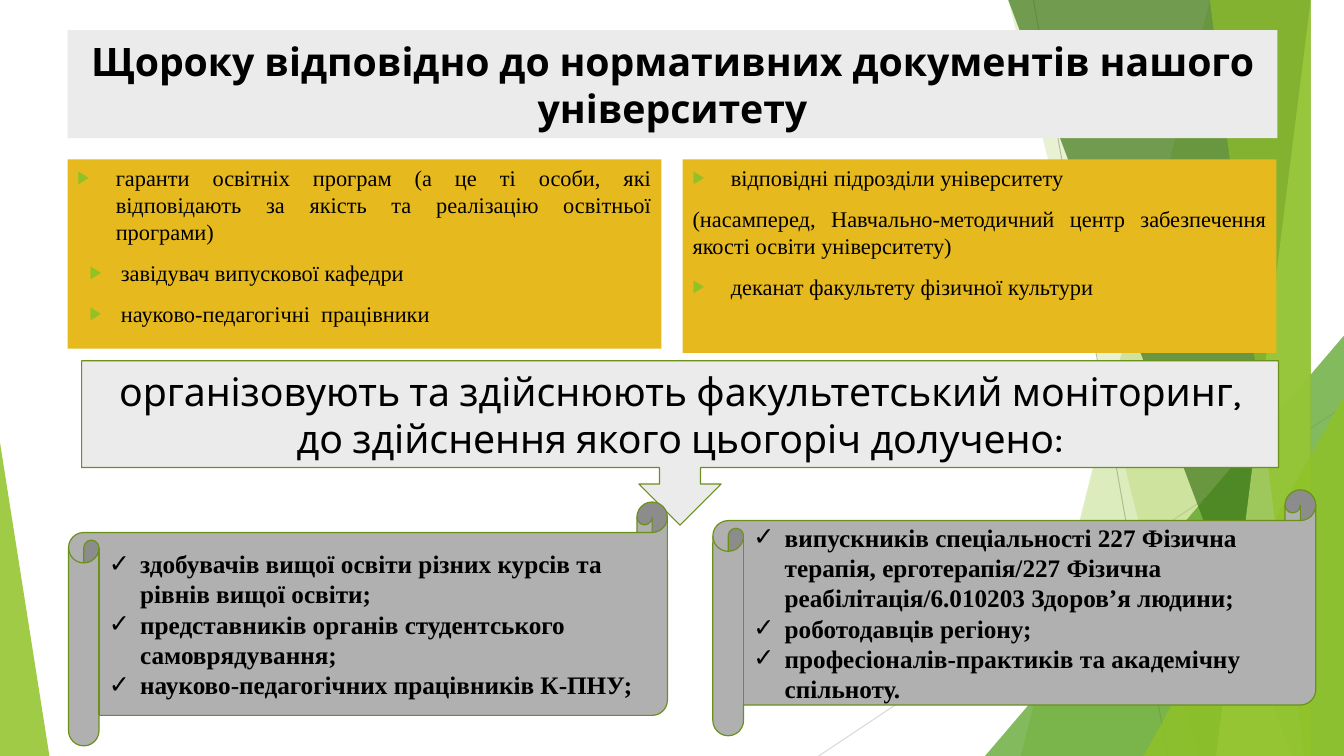
from lxml import etree
from pptx import Presentation
from pptx import util as u
from pptx.dml.color import RGBColor
from pptx.enum import shapes, text
from pptx.oxml.ns import qn

WIDE, HIGH = 13.33, 7.5
BLACK = RGBColor(0, 0, 0)
PALE = RGBColor(0xEB, 0xEB, 0xEB)
GOLD = RGBColor(0xE6, 0xB9, 0x1E)
GREY = RGBColor(0xB0, 0xB0, 0xB0)
EDGE = RGBColor(0x6B, 0x90, 0x1C)
LIME = RGBColor(0x90, 0xC2, 0x26)
LEAF = RGBColor(0x54, 0xA0, 0x21)
PINE = RGBColor(0x3F, 0x78, 0x19)
MINT = RGBColor(0xC0, 0xE4, 0x74)
SILVER = RGBColor(0xBF, 0xBF, 0xBF)
MIST = RGBColor(0xD9, 0xD9, 0xD9)
SANS, SERIF = "Karla", "Times New Roman"
LEFT, CENTER, JUST = (text.PP_ALIGN.LEFT, text.PP_ALIGN.CENTER, text.PP_ALIGN.JUSTIFY)
KIND = shapes.MSO_SHAPE

HEAD = "Щороку відповідно до нормативних документів нашого університету"
CALL = "організовують та здійснюють факультетський моніторинг, до здійснення якого цьогоріч долучено:"

WIDER, NARROW, FLAT = (0.38, -0.38), (0.43, -0.31), None
CARDS = [
    ((0.67, 1.58, 5.89, 1.88), [
        ("гаранти освітніх програм (а це ті особи, які відповідають за якість та реалізацію освітньої програми)", JUST, WIDER),
        ("завідувач випускової кафедри", LEFT, NARROW),
        ("науково-педагогічні  працівники", LEFT, NARROW)]),
    ((6.77, 1.58, 5.89, 1.92), [
        ("відповідні підрозділи університету", LEFT, WIDER),
        ("(насамперед, Навчально-методичний центр забезпечення якості освіти університету)", JUST, FLAT),
        ("деканат факультету фізичної культури", LEFT, WIDER)]),
]
SCROLLS = [
    ((0.68, 4.98, 5.94, 2.42), [
        "здобувачів вищої освіти різних курсів та рівнів вищої освіти;",
        "представників органів студентського самоврядування;",
        "науково-педагогічних працівників К-ПНУ;"]),
    ((7.07, 4.86, 5.98, 2.44), [
        "випускників спеціальності 227 Фізична терапія, ерготерапія/227 Фізична реабілітація/6.010203 Здоров’я людини;",
        "роботодавців регіону;",
        "професіоналів-практиків та академічну спільноту."]),
]
RAYS = [((10.25, 0), (11.58, HIGH), SILVER), ((WIDE, 4.03), (8.12, HIGH), MIST)]
BANDS = [
    ("band", 12.28, 10.04, LIME, 30),
    ("band", 10.5, 11.83, LIME, 20),
    ("peak", (9.77, 3.33, 3.56, 4.17), 1, LEAF, 72),
    ("band", 10.21, 12.91, PINE, 70),
    ("band", 13.03, 11.92, MINT, 70),
    ("band", 11.96, 13.18, LIME, 65),
    ("peak", (11.34, 3.93, 1.99, 3.57), 1, LIME, 80),
    ("peak", (0, 4.39, 0.49, 3.11), 0, LIME, 85),
]

deck = Presentation()
deck.slide_width, deck.slide_height = u.Inches(WIDE), u.Inches(HIGH)
slide = deck.slides.add_slide(deck.slide_layouts[5])
art = slide.shapes


def paint(shape, fill, line=None):
    shape.shadow.inherit = False
    shape.fill.solid()
    shape.fill.fore_color.rgb = fill
    if line is None:
        shape.line.fill.background()
    else:
        shape.line.color.rgb = line
        shape.line.width = u.Pt(0.85)


def add(kind, box, fill, line=None):
    shape = art.add_shape(kind, *map(u.Inches, box))
    paint(shape, fill, line)
    return shape


def fade(shape, share):
    color = shape.fill._xPr.find(".//" + qn("a:srgbClr"))
    etree.SubElement(color, qn("a:alpha")).set("val", str(share * 1000))


def style(par, font, size, bold, align):
    par.alignment = align
    par.font.name, par.font.size, par.font.bold = font, u.Pt(size), bold
    par.font.color.rgb = BLACK


def mark(par, sign, inset, color=None, size=None):
    props = par._p.get_or_add_pPr()
    props.set("marL", str(u.Inches(inset[0])))
    props.set("indent", str(u.Inches(inset[1])))
    if color is not None:
        tint = etree.SubElement(props, qn("a:buClr"))
        etree.SubElement(tint, qn("a:srgbClr")).set("val", str(color))
    if size:
        etree.SubElement(props, qn("a:buSzPct")).set("val", str(size * 1000))
    etree.SubElement(props, qn("a:buFont")).set("typeface", "Arial")
    etree.SubElement(props, qn("a:buChar")).set("char", sign)


def frame(shape, anchor):
    area = shape.text_frame
    area.word_wrap = True
    area.auto_size = text.MSO_AUTO_SIZE.NONE
    area.vertical_anchor = anchor
    return area


def lines(area, words):
    for at, word in enumerate(words):
        par = area.paragraphs[0] if at == 0 else area.add_paragraph()
        par.text = word
        yield at, par


for start, end, color in RAYS:
    ray = art.add_connector(shapes.MSO_CONNECTOR.STRAIGHT, *map(u.Inches, start + end))
    ray.line.color.rgb = color
    ray.line.width = u.Pt(0.75)
    etree.SubElement(ray._element.spPr, qn("a:effectLst"))

for form, first, last, color, share in BANDS:
    if form == "peak":
        piece = add(KIND.ISOSCELES_TRIANGLE, first, color)
        piece.adjustments[0] = last
    else:
        pen = art.build_freeform(first, 0, scale=u.Inches(1))
        pen.add_line_segments([(WIDE, 0), (WIDE, HIGH), (last, HIGH)])
        piece = pen.convert_to_shape()
        paint(piece, color)
    fade(piece, share)

title = art.title
art._spTree.append(title._element)
title.left, title.top, title.width, title.height = map(u.Inches, (0.67, 0.3, 12, 1.07))
title.fill.solid()
title.fill.fore_color.rgb = PALE
area = frame(title, text.MSO_ANCHOR.MIDDLE)
area.text = HEAD
style(area.paragraphs[0], SANS, 28, True, CENTER)

for box, rows in CARDS:
    area = frame(add(KIND.RECTANGLE, box, GOLD), text.MSO_ANCHOR.TOP)
    for at, par in lines(area, [row[0] for row in rows]):
        align, inset = rows[at][1:]
        if at:
            par.space_before = u.Pt(10)
        if inset:
            mark(par, "▶", inset, LIME, 80)
        style(par, SERIF, 16, False, align)

call = add(KIND.DOWN_ARROW_CALLOUT, (0.81, 3.58, 11.87, 1.63), PALE, EDGE)
area = frame(call, text.MSO_ANCHOR.MIDDLE)
area.text = CALL
style(area.paragraphs[0], SANS, 28, False, CENTER)

for box, words in SCROLLS:
    area = frame(add(KIND.HORIZONTAL_SCROLL, box, GREY, EDGE), text.MSO_ANCHOR.MIDDLE)
    for at, par in lines(area, words):
        mark(par, "✓", (0.31, -0.31))
        style(par, SERIF, 18, True, LEFT)

deck.save("out.pptx")
